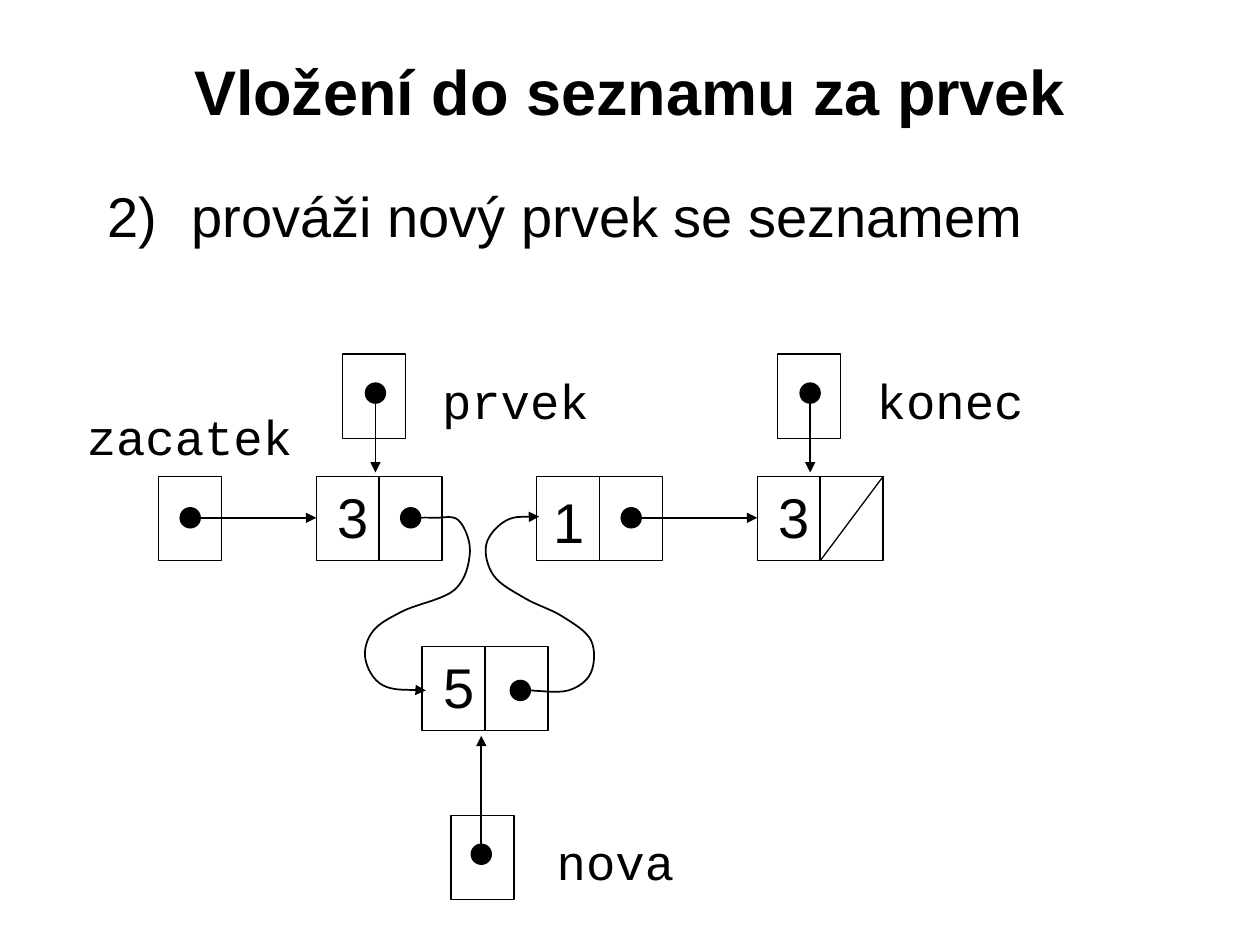
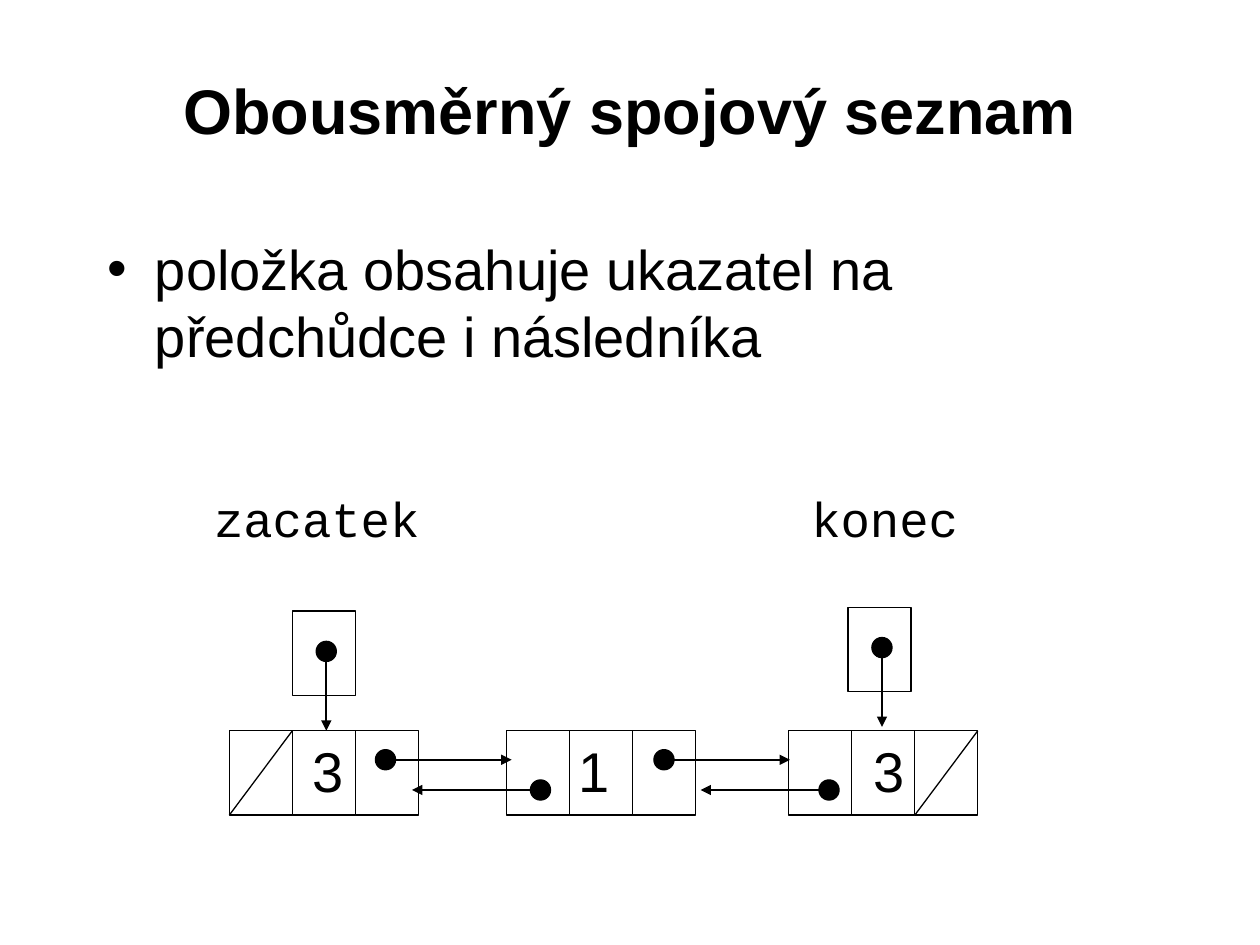
from dataclasses import dataclass

from lxml.etree import SubElement
from pptx import Presentation
from pptx.dml.color import RGBColor
from pptx.enum.shapes import MSO_CONNECTOR as Connector, MSO_SHAPE as Preset
from pptx.enum.text import MSO_ANCHOR as Anchor, MSO_AUTO_SIZE as AutoSize, PP_ALIGN as Align
from pptx.oxml.ns import qn
from pptx.util import Inches, Pt


@dataclass(frozen=True)
class Theme:
    ink: RGBColor = RGBColor(0, 0, 0)
    sans: str = "Arial"
    mono: str = "Courier New"
    title_size: int = 36
    body_size: int = 32
    label_size: int = 28
    outline: float = 0.75
    arrow: float = 1


THEME = Theme()
CELL_W, CELL_H = 0.5, 0.67
DOT = 0.16


def set_font(paragraph, size, name=THEME.sans, bold=False):
    values = {"size": Pt(size), "name": name, "bold": bold}
    for run in paragraph.runs:
        for key, value in values.items():
            setattr(run.font, key, value)
        run.font.color.rgb = THEME.ink


def fill_placeholder(holder, text, box, anchor):
    for side, length in zip(("left", "top", "width", "height"), box):
        setattr(holder, side, Inches(length))
    frame = holder.text_frame
    frame.text = text
    frame.auto_size = AutoSize.NONE
    frame.vertical_anchor = anchor
    return frame.paragraphs[0]


def add_heading(slide, text, top, height):
    paragraph = fill_placeholder(slide.shapes.title, text, (0.75, top, 8.5, height), Anchor.MIDDLE)
    paragraph.alignment = Align.CENTER
    set_font(paragraph, THEME.title_size, bold=True)


def add_statement(slide, text, top, height, indent, number=None):
    """Body line with a bullet, or with the given list number."""
    paragraph = fill_placeholder(slide.placeholders[1], text, (0.75, top, 8.5, height), Anchor.TOP)
    set_font(paragraph, THEME.body_size)
    properties = paragraph._p.get_or_add_pPr()
    properties.set("marL", str(Inches(indent)))
    properties.set("indent", str(-Inches(indent)))
    if number:
        SubElement(properties, qn("a:buAutoNum"), type="arabicParenR", startAt=str(number))


def add_text(slide, text, left, top, width, height, size, font, align=Align.LEFT):
    box = slide.shapes.add_textbox(*map(Inches, (left, top, width, height)))
    box.text_frame.word_wrap = False
    box.text_frame.auto_size = AutoSize.SHAPE_TO_FIT_TEXT
    paragraph = box.text_frame.paragraphs[0]
    paragraph.text = text
    paragraph.alignment = align
    set_font(paragraph, size, font)


def draw_line(shape, width, arrow=False):
    shape.line.color.rgb = THEME.ink
    shape.line.width = Pt(width)
    if arrow:
        SubElement(shape.element.spPr.find(qn("a:ln")), qn("a:tailEnd"), type="triangle")


def add_preset(slide, preset, left, top, width, height, filled=False):
    shape = slide.shapes.add_shape(preset, *map(Inches, (left, top, width, height)))
    if filled:
        shape.fill.solid()
        shape.fill.fore_color.rgb = THEME.ink
    else:
        shape.fill.background()
    draw_line(shape, THEME.outline)
    shape.shadow.inherit = False


def add_line(slide, start, end, width, arrow=False):
    line = slide.shapes.add_connector(Connector.STRAIGHT, *map(Inches, (*start, *end)))
    draw_line(line, width, arrow)
    SubElement(line.element.spPr, qn("a:effectLst"))


def add_dot(slide, x, y):
    add_preset(slide, Preset.OVAL, x - DOT / 2, y - DOT / 2, DOT, DOT, filled=True)


def add_pointer(slide, x, y, reach):
    """Dot at (x, y) with an arrow that runs by the reach (dx, dy)."""
    add_dot(slide, x, y)
    add_line(slide, (x, y), (x + reach[0], y + reach[1]), THEME.arrow, arrow=True)


def bend_segments(freeform):
    """Turn straight segments into Bézier curves, tangents taken from neighbouring knots."""
    knots = [(int(pt.get("x")), int(pt.get("y"))) for pt in freeform.element.iter(qn("a:pt"))]
    padded = [knots[0], *knots, knots[-1]]
    segments = list(freeform.element.iter(qn("a:lnTo")))
    for segment, before, start, end, after in zip(
            segments, padded, padded[1:], padded[2:], padded[3:]):
        segment.tag = qn("a:cubicBezTo")
        leaving = [b + (c - a) / 6 for a, b, c in zip(before, start, end)]
        arriving = [c - (d - b) / 6 for b, c, d in zip(start, end, after)]
        for place, (x, y) in enumerate((leaving, arriving)):
            control = SubElement(segment, qn("a:pt"), x=str(round(x)), y=str(round(y)))
            segment.insert(place, control)


def add_curved_arrow(slide, knots):
    first, *rest = [tuple(map(Inches, knot)) for knot in knots]
    builder = slide.shapes.build_freeform(*first)
    builder.add_line_segments(rest, close=False)
    curve = builder.convert_to_shape()
    bend_segments(curve)
    curve.fill.background()
    draw_line(curve, THEME.arrow, arrow=True)
    curve.shadow.inherit = False


def add_cell(slide, left, top, crossed=False):
    add_preset(slide, Preset.RECTANGLE, left, top, CELL_W, CELL_H)
    if crossed:
        add_line(slide, (left + CELL_W, top), (left, top + CELL_H), THEME.outline)


def add_node(slide, left, top, value, cells, value_cell, value_shift, crossed=None):
    """Row of cells, one with the value and at most one crossed out as empty link."""
    for index in range(cells):
        add_cell(slide, left + index * CELL_W, top, index == crossed)
    dx, dy = value_shift
    add_text(slide, value, left + value_cell * CELL_W + dx, top + dy, 0.45, 0.63,
             THEME.body_size, THEME.sans, Align.CENTER)


def add_variable(slide, name, left, top, label_shift, dot_shift, reach):
    """Named cell holding a pointer; shifts count from the cell's corner."""
    add_cell(slide, left, top)
    add_pointer(slide, left + dot_shift[0], top + dot_shift[1], reach)
    add_text(slide, name, left + label_shift[0], top + label_shift[1],
             0.2 + 0.233 * len(name), 0.57, THEME.label_size, THEME.mono)


def add_insertion_diagram(slide, left, top):
    pitch, link_x, link_y = 1.75, 0.75, 0.33
    first, second, third = (left + pitch * place for place in (1, 2, 3))
    add_variable(slide, "zacatek", left + 0.5, top, (-0.67, -0.6), (0.25, link_y), (1, 0))
    add_node(slide, first, top, "3", 2, 0, (0.07, 0))
    add_node(slide, second, top, "1", 2, 0, (0.03, 0.04))
    add_node(slide, third, top, "3", 2, 0, (0.07, 0), crossed=1)
    add_dot(slide, first + link_x, top + link_y)
    add_pointer(slide, second + link_x, top + link_y, (1, 0))
    for name, cell_left in (("prvek", first + 0.21), ("konec", third + 0.16)):
        add_variable(slide, name, cell_left, top - 0.97, (0.69, 0.08), (0.26, 0.31), (0, 0.63))

    new, new_top = left + 2.59, top + 1.35
    add_node(slide, new, new_top, "5", 2, 0, (0.07, 0))
    add_dot(slide, new + 0.78, new_top + 0.35)
    add_variable(slide, "nova", new + 0.23, new_top + 1.34, (0.74, 0.08), (0.24, 0.31), (0, -0.94))

    new_to_second = [(3.45, 1.7), (3.75, 1.7), (3.93, 1.56), (3.93, 1.3), (3.7, 1.11),
                     (3.41, 0.97), (3.16, 0.79), (3.1, 0.54), (3.26, 0.35), (3.52, 0.32)]
    first_to_new = [(2.5, 0.33), (2.69, 0.33), (2.88, 0.35), (2.97, 0.6), (2.85, 0.9),
                    (2.44, 1.07), (2.2, 1.23), (2.14, 1.45), (2.28, 1.66), (2.62, 1.7)]
    for knots in (new_to_second, first_to_new):
        add_curved_arrow(slide, [(left + x, top + y) for x, y in knots])


def add_two_way_diagram(slide, left, top):
    first, second, third = left, left + 2.2, left + 4.44
    next_y, previous_y = top + 0.23, top + 0.47
    add_node(slide, first, top, "3", 3, 1, (0.06, 0), crossed=0)
    add_node(slide, second, top, "1", 3, 1, (-0.03, 0))
    add_node(slide, third, top, "3", 3, 1, (0.07, 0), crossed=2)
    for node, inset in ((first, 1.24), (second, 1.25)):
        add_pointer(slide, node + inset, next_y, (1, 0))
    for node, inset in ((second, 0.27), (third, 0.32)):
        add_pointer(slide, node + inset, previous_y, (-1.02, 0))
    add_variable(slide, "zacatek", first + 0.5, top - 0.95, (-0.72, -1.02), (0.27, 0.32), (0, 0.63))
    add_variable(slide, "konec", third + 0.47, top - 0.98, (-0.39, -0.99), (0.27, 0.32), (0, 0.63))


def build_insertion(slide):
    add_heading(slide, "Vložení do seznamu za prvek", 0.36, 0.71)
    add_statement(slide, "prováži nový prvek se seznamem", 1.39, 1.18, 0.67, number=2)
    add_insertion_diagram(slide, 0.76, 3.78)


def build_two_way_list(slide):
    add_heading(slide, "Obousměrný spojový seznam", 0.36, 1.02)
    add_statement(slide, "položka obsahuje ukazatel na předchůdce i následníka", 1.81, 1.23, 0.38)
    add_two_way_diagram(slide, 1.82, 5.8)


def main():
    deck = Presentation()
    deck.slide_width, deck.slide_height = Inches(10), Inches(7.5)
    for build in (build_insertion, build_two_way_list):
        build(deck.slides.add_slide(deck.slide_layouts[1]))
    deck.save("out.pptx")


if __name__ == "__main__":
    main()
